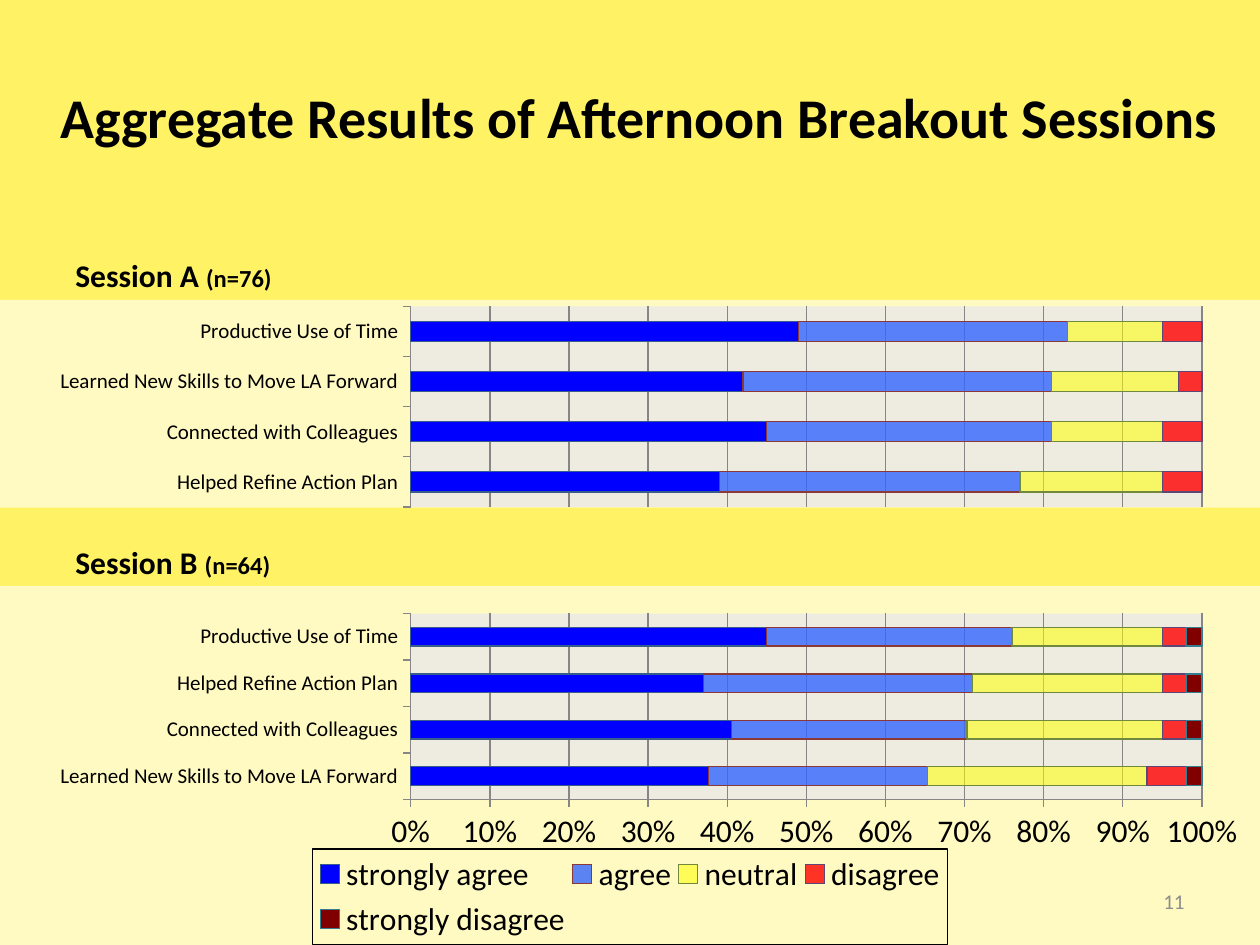
import pptx
import pptx.chart.data
import pptx.dml.color
import pptx.enum.chart
import pptx.enum.text
import pptx.oxml
import pptx.oxml.ns
import pptx.util

Inches = pptx.util.Inches
Pt = pptx.util.Pt
FONT = "Calibri"

COLORS = {
    "background": "FFF365",
    "panel": "FFFAC1",
    "plot": "EEECE1",
    "text": "000000",
    "page": "8C8C8C",
    "grid": "868686",
}

# name, fill, opacity in percent, outline
RATINGS = [
    ("strongly agree", "0000FF", 100, "385D8A"),
    ("agree", "3366FF", 80, "8C3836"),
    ("neutral", "FFFF00", 55, "71893F"),
    ("disagree", "FF0000", 80, "5C4776"),
    ("strongly disagree", "800000", 100, "357D91"),
]

TIME = "Productive Use of Time"
SKILLS = "Learned New Skills to Move LA Forward"
COLLEAGUES = "Connected with Colleagues"
PLAN = "Helped Refine Action Plan"

# Categories run from the bottom bar to the top bar
SESSION_A = {
    PLAN: (39, 38, 18, 5, 0),
    COLLEAGUES: (45, 36, 14, 5, 0),
    SKILLS: (42, 39, 16, 3, 0),
    TIME: (49, 34, 12, 5, 0),
}
SESSION_B = {
    SKILLS: (38, 28, 28, 5, 2),
    COLLEAGUES: (41, 30, 25, 3, 2),
    PLAN: (37, 34, 24, 3, 2),
    TIME: (45, 31, 19, 3, 2),
}


def rgb(value):
    return pptx.dml.color.RGBColor.from_string(value)


def style_font(font, size, color=COLORS["text"], bold=False):
    values = {"name": FONT, "size": Pt(size), "bold": bold}
    for attribute, value in values.items():
        setattr(font, attribute, value)
    font.color.rgb = rgb(color)


def write_runs(frame, runs, color=COLORS["text"], bold=True):
    """Fill the first paragraph with (text, size) runs."""
    paragraph = frame.paragraphs[0]
    for text, size in runs:
        run = paragraph.add_run()
        run.text = text
        style_font(run.font, size, color, bold)
    return paragraph


def place(shape, left, top, width, height):
    box = {"left": left, "top": top, "width": width, "height": height}
    for attribute, value in box.items():
        setattr(shape, attribute, Inches(value))


def add_label(slide, box, runs, **style):
    frame = slide.shapes.add_textbox(*map(Inches, box)).text_frame
    frame.word_wrap = True
    return frame, write_runs(frame, runs, **style)


def chart_xml(body):
    return pptx.oxml.parse_xml(
        f"<c:{body[0]} {pptx.oxml.ns.nsdecls('c', 'a')}>{body[1]}</c:{body[0]}>")


def area_format(fill=None, line=None):
    parts = [f'<a:solidFill><a:srgbClr val="{fill}"/></a:solidFill>'
             if fill else "<a:noFill/>"]
    edge = (f'<a:solidFill><a:srgbClr val="{line}"/></a:solidFill>'
            if line else "<a:noFill/>")
    parts.append(f'<a:ln w="9525">{edge}</a:ln>')
    return chart_xml(("spPr", "".join(parts)))


def manual_layout(box, inner=False):
    target = '<c:layoutTarget val="inner"/>' if inner else ""
    modes = '<c:xMode val="edge"/><c:yMode val="edge"/>'
    sizes = "".join(f'<c:{key} val="{value}"/>' for key, value in zip("xywh", box))
    return chart_xml(
        ("layout", f"<c:manualLayout>{target}{modes}{sizes}</c:manualLayout>"))


def style_series(series, fill, opacity, outline):
    series.format.fill.solid()
    series.format.fill.fore_color.rgb = rgb(fill)
    series.format.line.color.rgb = rgb(outline)
    series.format.line.width = Pt(0.75)
    if opacity < 100:
        color = series._element.xpath("c:spPr/a:solidFill/a:srgbClr")[0]
        color.append(pptx.oxml.parse_xml(
            f'<a:alpha {pptx.oxml.ns.nsdecls("a")} val="{opacity * 1000}"/>'))


def style_axes(chart, show_values):
    tick = pptx.enum.chart.XL_TICK_MARK
    categories, values = chart.category_axis, chart.value_axis
    for axis, size in ((categories, 12), (values, 18)):
        axis.major_tick_mark = tick.OUTSIDE
        axis.minor_tick_mark = tick.NONE
        axis.format.line.color.rgb = rgb(COLORS["grid"])
        style_font(axis.tick_labels.font, size)
    values.visible = show_values
    values.major_unit = 0.1
    values.has_major_gridlines = True
    values.major_gridlines.format.line.color.rgb = rgb(COLORS["grid"])
    values.tick_labels.number_format = "0%"
    values.tick_labels.number_format_is_linked = False


def add_legend(chart, box):
    chart.has_legend = True
    legend = chart.legend
    legend.position = pptx.enum.chart.XL_LEGEND_POSITION.BOTTOM
    legend.include_in_layout = False
    style_font(legend.font, 18)
    element = legend._element
    element.xpath("c:legendPos")[0].addnext(manual_layout(box))
    element.xpath("c:overlay")[0].addnext(area_format(line=COLORS["text"]))


def add_results(slide, box, results, plot_box, legend_box=None):
    """Add one session's bars; only a chart with a legend shows its scale."""
    data = pptx.chart.data.CategoryChartData()
    data.categories = list(results)
    for rating, votes in zip(RATINGS, zip(*results.values())):
        data.add_series(rating[0], votes)
    chart = slide.shapes.add_chart(
        pptx.enum.chart.XL_CHART_TYPE.BAR_STACKED_100,
        *map(Inches, box), data).chart
    chart.has_title = False
    chart.has_legend = False
    style_font(chart.font, 18)

    bars = chart.plots[0]
    bars.gap_width, bars.overlap = 150, 100
    bars.vary_by_categories = False
    for series, rating in zip(bars.series, RATINGS):
        style_series(series, *rating[1:])
    style_axes(chart, show_values=legend_box is not None)
    if legend_box:
        add_legend(chart, legend_box)

    plot_area = chart.element.xpath("c:chart/c:plotArea")[0]
    for automatic in plot_area.xpath("c:layout"):
        plot_area.remove(automatic)
    plot_area.insert(0, manual_layout(plot_box, inner=True))
    plot_area.append(area_format(COLORS["plot"]))
    chart.element.xpath("c:chart")[0].addnext(area_format(COLORS["panel"]))


def main():
    deck = pptx.Presentation()
    deck.slide_width, deck.slide_height = Inches(10), Inches(7.5)
    slide = deck.slides.add_slide(deck.slide_layouts[5])
    slide.background.fill.solid()
    slide.background.fill.fore_color.rgb = rgb(COLORS["background"])

    title = slide.shapes.title
    place(title, 0.29, 0.3, 9.57, 1.25)
    title.text_frame.vertical_anchor = pptx.enum.text.MSO_ANCHOR.MIDDLE
    write_runs(title.text_frame,
               [("Aggregate Results of Afternoon Breakout Sessions", 32)])

    add_results(slide, (0, 4.65, 10, 2.85), SESSION_B,
                (0.326, 0.077, 0.628, 0.518), (0.248, 0.733, 0.504, 0.265))
    add_results(slide, (0, 2.38, 10, 1.65), SESSION_A,
                (0.326, 0.031, 0.628, 0.966))

    for session, count, top in (("A", 76, 1.98), ("B", 64, 4.26)):
        add_label(slide, (0.5, top, 2.83, 0.4),
                  [(f"Session {session} ", 18), (f"(n={count})", 14)])

    frame, page = add_label(slide, (7.17, 6.95, 2.33, 0.4), [("11", 12)],
                            color=COLORS["page"], bold=False)
    frame.vertical_anchor = pptx.enum.text.MSO_ANCHOR.MIDDLE
    page.alignment = pptx.enum.text.PP_ALIGN.RIGHT
    deck.save("out.pptx")


if __name__ == "__main__":
    main()
